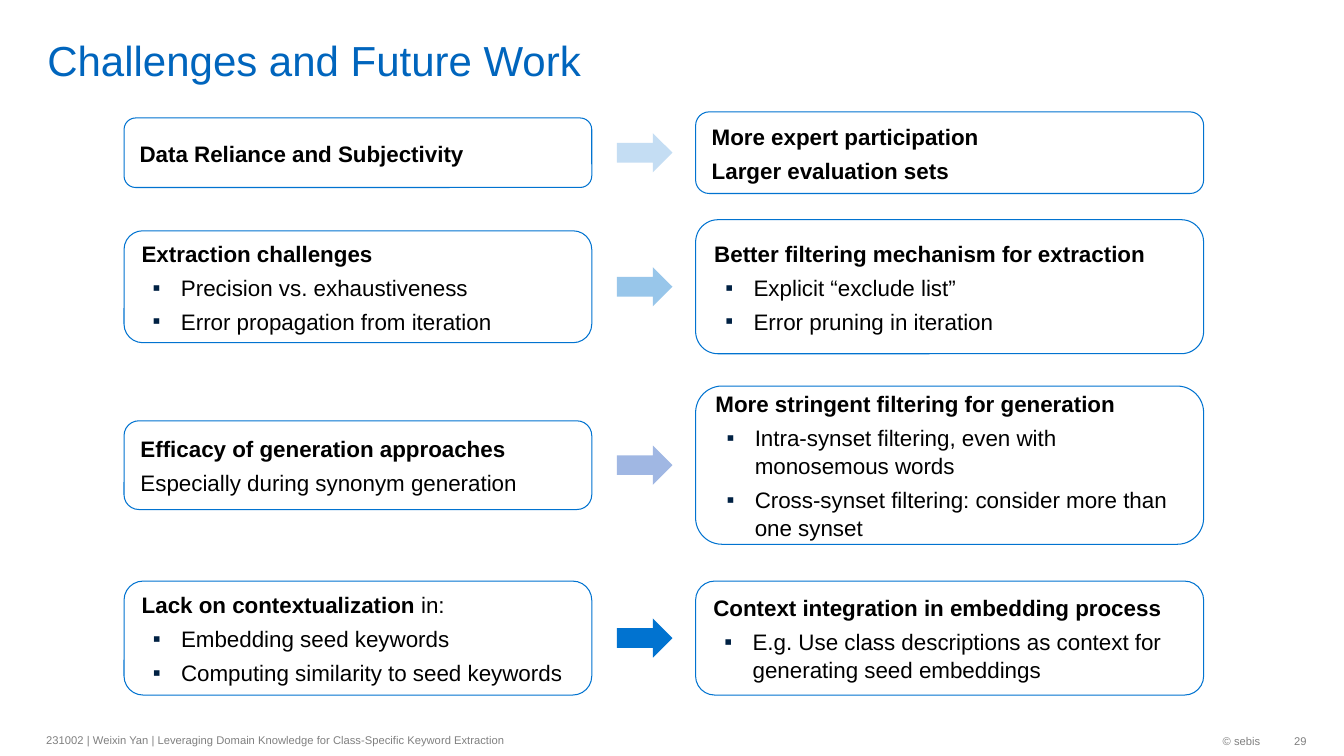
from dataclasses import dataclass

from lxml.etree import SubElement
from pptx import Presentation
from pptx.dml.color import RGBColor
from pptx.enum.shapes import MSO_SHAPE as Shape
from pptx.enum.text import MSO_ANCHOR as Anchor, PP_ALIGN as Align
from pptx.oxml.ns import qn
from pptx.util import Inches, Pt

FONT = "Arial"
BLUE, BLACK, GREY, NAVY, TITLE_BLUE = "0173D0", "000000", "808080", "002143", "0065BD"


@dataclass
class Line:
    text: str
    bold: bool = False
    bullet: bool = False
    tail: str = ""  # regular text after a bold opening


@dataclass
class Card:
    height: float
    lines: list[Line]


@dataclass
class Row:
    centre: float
    arrow_color: str
    challenge: Card
    response: Card


@dataclass
class Column:
    left: float
    width: float


@dataclass
class Label:
    text: str
    box: tuple[float, float, float, float]
    size: int = 8
    color: str = GREY
    align: Align = Align.LEFT
    anchor: Anchor = Anchor.MIDDLE
    right_inset: float = 0.1


def head(text: str, tail: str = "") -> Line:
    return Line(text, bold=True, tail=tail)


def item(text: str) -> Line:
    return Line(text, bullet=True)


# Columns and rows, in percent of the slide's width and height
CHALLENGES = Column(9.23, 34.8)
ARROWS = Column(45.91, 4.13)
RESPONSES = Column(51.76, 37.8)
ARROW_HEIGHT = 5.2

ROWS = [
    Row(20.2, "C4DDF3",
        Card(9.2, [head("Data Reliance and Subjectivity")]),
        Card(10.8, [head("More expert participation"),
                    head("Larger evaluation sets")])),
    Row(37.93, "98C6EA",
        Card(14.8, [head("Extraction challenges"),
                    item("Precision vs. exhaustiveness"),
                    item("Error propagation from iteration")]),
        Card(17.73, [head("Better filtering mechanism for extraction"),
                     item("Explicit “exclude list”"),
                     item("Error pruning in iteration")])),
    Row(61.53, "A0B7E3",
        Card(11.73, [head("Efficacy of generation approaches"),
                     Line("Especially during synonym generation")]),
        Card(20.93, [head("More stringent filtering for generation"),
                     item("Intra-synset filtering, even with monosemous words"),
                     item("Cross-synset filtering: consider more than one synset")])),
    Row(84.4, BLUE,
        Card(15.07, [head("Lack on contextualization ", tail="in:"),
                     item("Embedding seed keywords"),
                     item("Computing similarity to seed keywords")]),
        Card(15.07, [head("Context integration in embedding process"),
                     item("E.g. Use class descriptions as context for "
                          "generating seed embeddings")])),
]

LABELS = [
    Label("Challenges and Future Work", (2.78, 0.67, 86.87, 10.53),
          size=30, color=TITLE_BLUE, anchor=Anchor.BOTTOM),
    Label("231002 | Weixin Yan | Leveraging Domain Knowledge for "
          "Class-Specific Keyword Extraction", (2.7, 95.73, 47.26, 4.27)),
    Label("© sebis", (76.97, 95.87, 17.55, 4.27), align=Align.RIGHT),
    Label("29", (94.52, 95.87, 2.7, 4.27), align=Align.RIGHT, right_inset=0),
]

deck = Presentation()
deck.slide_width, deck.slide_height = Inches(13.33), Inches(7.5)
slide = deck.slides.add_slide(deck.slide_layouts[6])


def rgb(color: str) -> RGBColor:
    return RGBColor.from_string(color)


def place(left: float, top: float, width: float, height: float) -> list[int]:
    across, down = deck.slide_width / 100, deck.slide_height / 100
    return [round(left * across), round(top * down),
            round(width * across), round(height * down)]


def style_run(run, size: int, color: str, bold: bool = False) -> None:
    run.font.name, run.font.size, run.font.bold = FONT, Pt(size), bold
    run.font.color.rgb = rgb(color)


def add_bullet(paragraph) -> None:
    props = paragraph._p.get_or_add_pPr()
    props.set("marL", str(Inches(0.39)))
    props.set("indent", str(Inches(-0.28)))
    color = SubElement(props, qn("a:buClr"))
    SubElement(color, qn("a:srgbClr"), val=NAVY)
    SubElement(props, qn("a:buFont"), typeface=FONT)
    SubElement(props, qn("a:buChar"), char="▪")


def add_block(kind: Shape, column: Column, centre: float, height: float):
    block = slide.shapes.add_shape(
        kind, *place(column.left, centre - height / 2, column.width, height))
    block.shadow.inherit = False
    return block


def add_card(card: Card, column: Column, centre: float) -> None:
    block = add_block(Shape.ROUNDED_RECTANGLE, column, centre, card.height)
    block.fill.background()
    block.line.color.rgb, block.line.width = rgb(BLUE), Pt(0.75)
    frame = block.text_frame
    frame.word_wrap, frame.vertical_anchor = True, Anchor.MIDDLE
    frame.margin_left = frame.margin_right = Inches(0.12)
    frame.margin_top = frame.margin_bottom = Inches(0.12)
    frame.text = "\n".join(line.text for line in card.lines)
    for paragraph, line in zip(frame.paragraphs, card.lines):
        if line.bullet:
            add_bullet(paragraph)
        paragraph.alignment = Align.LEFT
        paragraph.line_spacing, paragraph.space_after = 1.05, Pt(4)
        style_run(paragraph.runs[0], 16, BLACK, line.bold)
        if line.tail:
            tail = paragraph.add_run()
            tail.text = line.tail
            style_run(tail, 16, BLACK)


def add_arrow(row: Row) -> None:
    arrow = add_block(Shape.RIGHT_ARROW, ARROWS, row.centre, ARROW_HEIGHT)
    arrow.fill.solid()
    arrow.fill.fore_color.rgb = rgb(row.arrow_color)
    arrow.line.fill.background()


def add_label(label: Label) -> None:
    frame = slide.shapes.add_textbox(*place(*label.box)).text_frame
    frame.word_wrap, frame.vertical_anchor = True, label.anchor
    frame.margin_right = Inches(label.right_inset)
    if label.anchor == Anchor.BOTTOM:
        frame.margin_top = frame.margin_bottom = 0
    frame.text = label.text
    frame.paragraphs[0].alignment = label.align
    style_run(frame.paragraphs[0].runs[0], label.size, label.color)


# Title and footer
for label in LABELS:
    add_label(label)

# Each challenge points to its response
for row in ROWS:
    add_card(row.challenge, CHALLENGES, row.centre)
    add_arrow(row)
    add_card(row.response, RESPONSES, row.centre)

deck.save("out.pptx")
